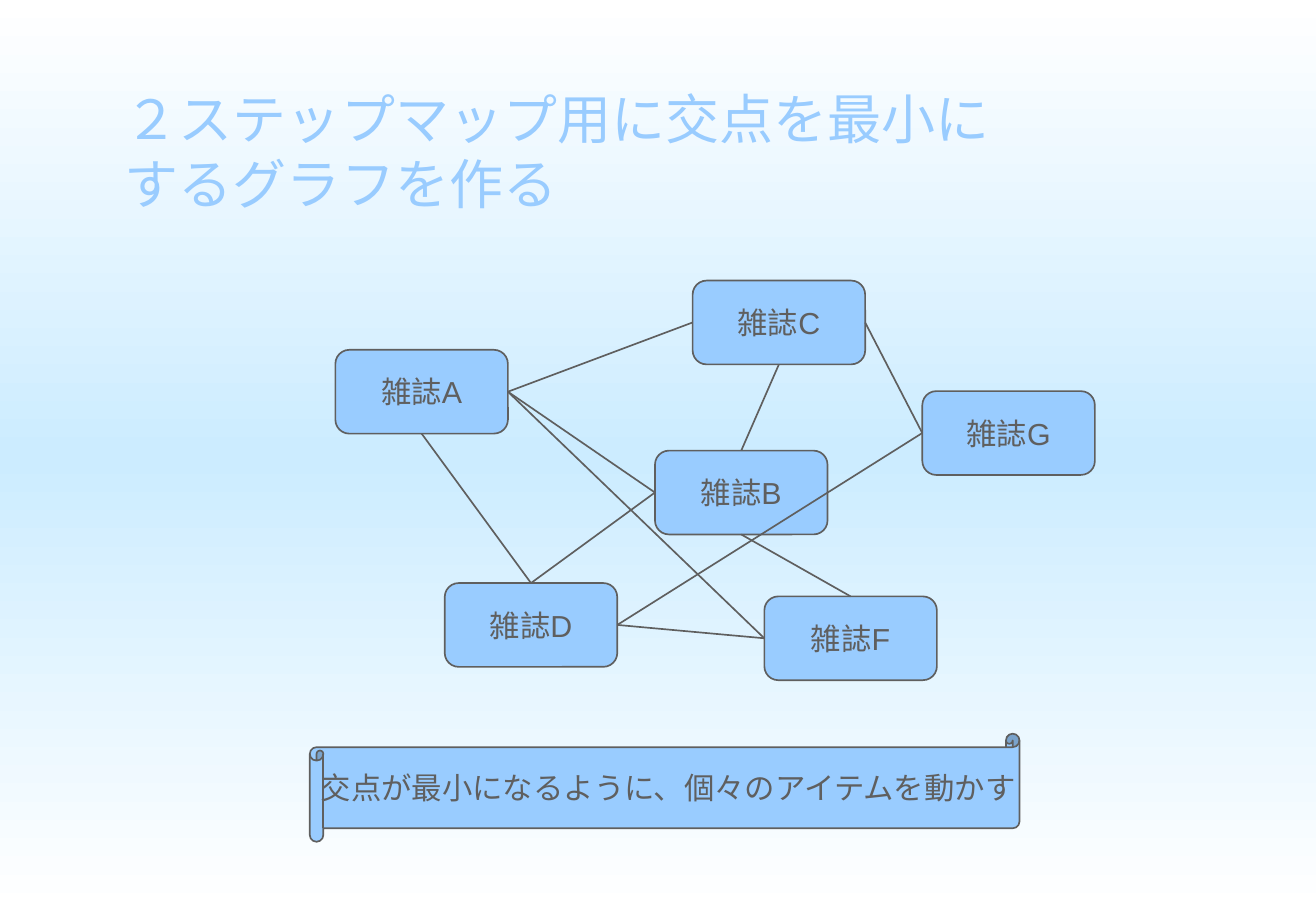
from copy import deepcopy

from pptx import Presentation
from pptx.dml.color import RGBColor
from pptx.enum.shapes import MSO_CONNECTOR, MSO_SHAPE
from pptx.enum.text import MSO_ANCHOR, PP_ALIGN
from pptx.oxml.ns import qn
from pptx.oxml.xmlchemy import OxmlElement
from pptx.util import Inches, Pt

TOP, LEFT, BOTTOM, RIGHT = range(4)
BOX_WIDTH, BOX_HEIGHT = 1.42, 0.69

JOURNALS = {
    "A": (2.76, 2.88),
    "B": (5.39, 3.71),
    "C": (5.7, 2.31),
    "D": (3.66, 4.8),
    "F": (6.29, 4.91),
    "G": (7.59, 3.22),
}

LINKS = [
    ("G", LEFT, "C", RIGHT),
    ("G", LEFT, "D", RIGHT),
    ("C", LEFT, "A", RIGHT),
    ("C", BOTTOM, "B", TOP),
    ("F", TOP, "B", BOTTOM),
    ("F", LEFT, "D", RIGHT),
    ("D", TOP, "B", LEFT),
    ("D", TOP, "A", BOTTOM),
    ("A", RIGHT, "F", LEFT),
    ("B", LEFT, "A", RIGHT),
]


def color(value):
    """Return the colour for a hex string."""
    return RGBColor.from_string(value)


def write_text(shape, text, font="Arial", size=18, fill="5F5F5F", align=PP_ALIGN.CENTER, wrap=False):
    """Put one formatted paragraph, centred vertically, into a shape."""
    frame = shape.text_frame
    frame.word_wrap = wrap
    frame.vertical_anchor = MSO_ANCHOR.MIDDLE
    paragraph = frame.paragraphs[0]
    paragraph.alignment = align
    run = paragraph.add_run()
    run.text = text
    run.font.name = font
    run.font.size = Pt(size)
    run.font.color.rgb = color(fill)


class JournalMap:
    """Draw the journal graph on one slide in a shared style."""

    accent = "99CCFF"
    ink = "5F5F5F"

    def __init__(self, slide):
        self.slide = slide

    def background(self, stops):
        """Fill the background with a vertical gradient of three colours."""
        fill = self.slide.background.fill
        fill.gradient()
        fill.gradient_angle = 90
        stop_list = self.slide.element.find(".//" + qn("a:gsLst"))
        stop_list.append(deepcopy(stop_list[0]))
        for stop, (position, value) in zip(fill.gradient_stops, stops):
            stop.position = position
            stop.color.rgb = color(value)

    def title(self, text, left, top, width, height):
        """Add the heading."""
        box = self.slide.shapes.add_textbox(Inches(left), Inches(top), Inches(width), Inches(height))
        write_text(box, text, font="DejaVu Sans", size=32, fill=self.accent, align=PP_ALIGN.LEFT, wrap=True)

    def outline(self, line):
        """Give a line the shared colour and width."""
        line.color.rgb = color(self.ink)
        line.width = Pt(1)

    def box(self, kind, text, left, top, width, height):
        """Add a filled shape with a centred label."""
        shape = self.slide.shapes.add_shape(kind, Inches(left), Inches(top), Inches(width), Inches(height))
        shape.shadow.inherit = False
        shape.fill.solid()
        shape.fill.fore_color.rgb = color(self.accent)
        self.outline(shape.line)
        write_text(shape, text, fill=self.ink)
        return shape

    def link(self, start, start_side, end, end_side):
        """Join the given sides of two boxes with a straight line."""
        connector = self.slide.shapes.add_connector(MSO_CONNECTOR.STRAIGHT, 0, 0, 0, 0)
        connector.begin_connect(start, start_side)
        connector.end_connect(end, end_side)
        self.outline(connector.line)
        connector.element.spPr.append(OxmlElement("a:effectLst"))


def main():
    """Build the slide and save it."""
    presentation = Presentation()
    presentation.slide_width = Inches(10.83)
    presentation.slide_height = Inches(7.5)
    journal_map = JournalMap(presentation.slides.add_slide(presentation.slide_layouts[6]))

    journal_map.background([(0, "FFFFFF"), (0.5, "CCECFF"), (1, "FFFFFF")])
    journal_map.title("２ステップマップ用に交点を最小にするグラフを作る", 0.93, 0.61, 7.45, 1.25)
    boxes = {
        name: journal_map.box(MSO_SHAPE.ROUNDED_RECTANGLE, f"雑誌{name}", left, top, BOX_WIDTH, BOX_HEIGHT)
        for name, (left, top) in JOURNALS.items()
    }
    for start, start_side, end, end_side in LINKS:
        journal_map.link(boxes[start], start_side, boxes[end], end_side)
    journal_map.box(
        MSO_SHAPE.HORIZONTAL_SCROLL, "交点が最小になるように、個々のアイテムを動かす", 2.55, 6.04, 5.84, 0.89
    )
    presentation.save("out.pptx")


if __name__ == "__main__":
    main()
